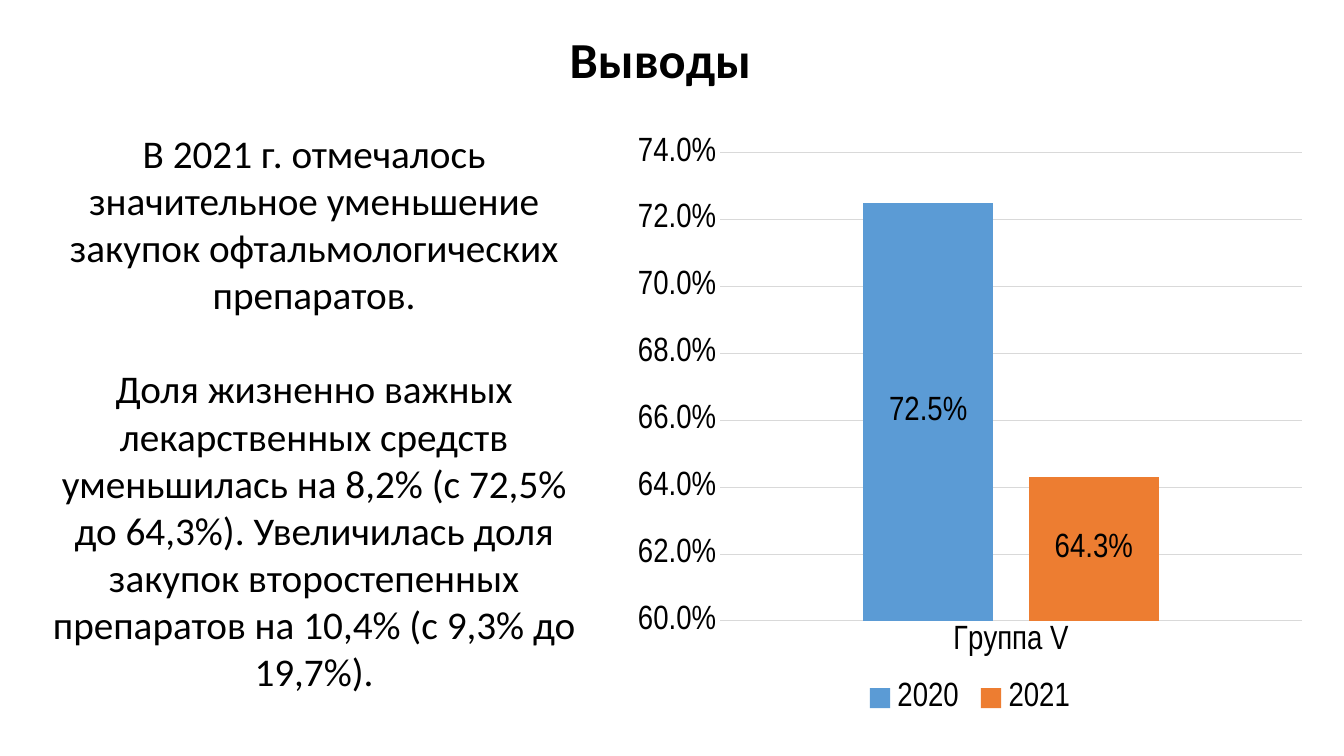
import pptx
import pptx.chart.data
import pptx.dml.color
import pptx.enum.chart
import pptx.enum.text
import pptx.util

Inches = pptx.util.Inches
Pt = pptx.util.Pt
COLORS = {"text": "000000", "grid": "D9D9D9", "2020": "5B9BD5", "2021": "ED7D31"}
SHARES = {"2020": 0.725, "2021": 0.643}
CONCLUSIONS = [
    "В 2021 г. отмечалось значительное уменьшение закупок офтальмологических препаратов.",
    "Доля жизненно важных лекарственных средств уменьшилась на 8,2% (с 72,5% до 64,3%). "
    "Увеличилась доля закупок второстепенных препаратов на 10,4% (с 9,3% до 19,7%).",
]


def color(name):
    return pptx.dml.color.RGBColor.from_string(COLORS[name])


def style_font(font, name, size, bold=False):
    font.name = name
    font.size = Pt(size)
    font.bold = bold
    font.color.rgb = color("text")


deck = pptx.Presentation()
deck.slide_width = Inches(13.33)
deck.slide_height = Inches(7.5)
page = deck.slides.add_slide(deck.slide_layouts[5])

# Title
title = page.shapes.title
title.left, title.top, title.width, title.height = map(Inches, (4.8, 0.23, 3.5, 0.78))
title.text_frame.text = "Выводы"
title.text_frame.auto_size = pptx.enum.text.MSO_AUTO_SIZE.NONE
title.text_frame.vertical_anchor = pptx.enum.text.MSO_ANCHOR.MIDDLE
heading = title.text_frame.paragraphs[0]
heading.alignment = pptx.enum.text.PP_ALIGN.CENTER
heading.line_spacing = 0.9
style_font(heading.runs[0].font, "Calibri", 36, bold=True)

# Conclusions on the left
box = page.shapes.add_textbox(Inches(0.3), Inches(1.23), Inches(5.63), Inches(5.76))
box.text_frame.word_wrap = True
box.text_frame.text = "\n".join(CONCLUSIONS)
for para in box.text_frame.paragraphs:
    para.alignment = pptx.enum.text.PP_ALIGN.CENTER
    style_font(para.runs[0].font, "Calibri", 28)
box.text_frame.paragraphs[1].space_before = Pt(34)

# Column chart on the right
chart_data = pptx.chart.data.CategoryChartData(number_format="0.0%")
chart_data.categories = ["Группа V"]
for year, share in SHARES.items():
    chart_data.add_series(year, [share])
chart = page.shapes.add_chart(
    pptx.enum.chart.XL_CHART_TYPE.COLUMN_CLUSTERED,
    Inches(6.19), Inches(1.24), Inches(6.86), Inches(5.91), chart_data,
).chart
style_font(chart.font, "Arial Narrow", 24)
chart.has_title = False
chart.has_legend = True
chart.legend.position = pptx.enum.chart.XL_LEGEND_POSITION.BOTTOM
chart.legend.include_in_layout = False

# Columns and their labels
plot = chart.plots[0]
plot.gap_width = 219
plot.overlap = -27
plot.vary_by_categories = False
for series in plot.series:
    series.format.fill.solid()
    series.format.fill.fore_color.rgb = color(series.name)
    labels = series.data_labels
    labels.show_value = True
    labels.number_format = "0.0%"
    labels.number_format_is_linked = False
    labels.position = pptx.enum.chart.XL_LABEL_POSITION.CENTER
    style_font(labels.font, "Arial Narrow", 24)

# Axes and gridlines
value_axis = chart.value_axis
value_axis.minimum_scale = 0.6
value_axis.maximum_scale = 0.74
value_axis.major_unit = 0.02
value_axis.tick_labels.number_format = "0.0%"
value_axis.tick_labels.number_format_is_linked = False
value_axis.format.line.fill.background()
for axis in (value_axis, chart.category_axis):
    axis.major_tick_mark = pptx.enum.chart.XL_TICK_MARK.NONE
    axis.minor_tick_mark = pptx.enum.chart.XL_TICK_MARK.NONE
for line in (value_axis.major_gridlines.format.line, chart.category_axis.format.line):
    line.color.rgb = color("grid")
    line.width = Pt(0.75)

deck.save("out.pptx")
